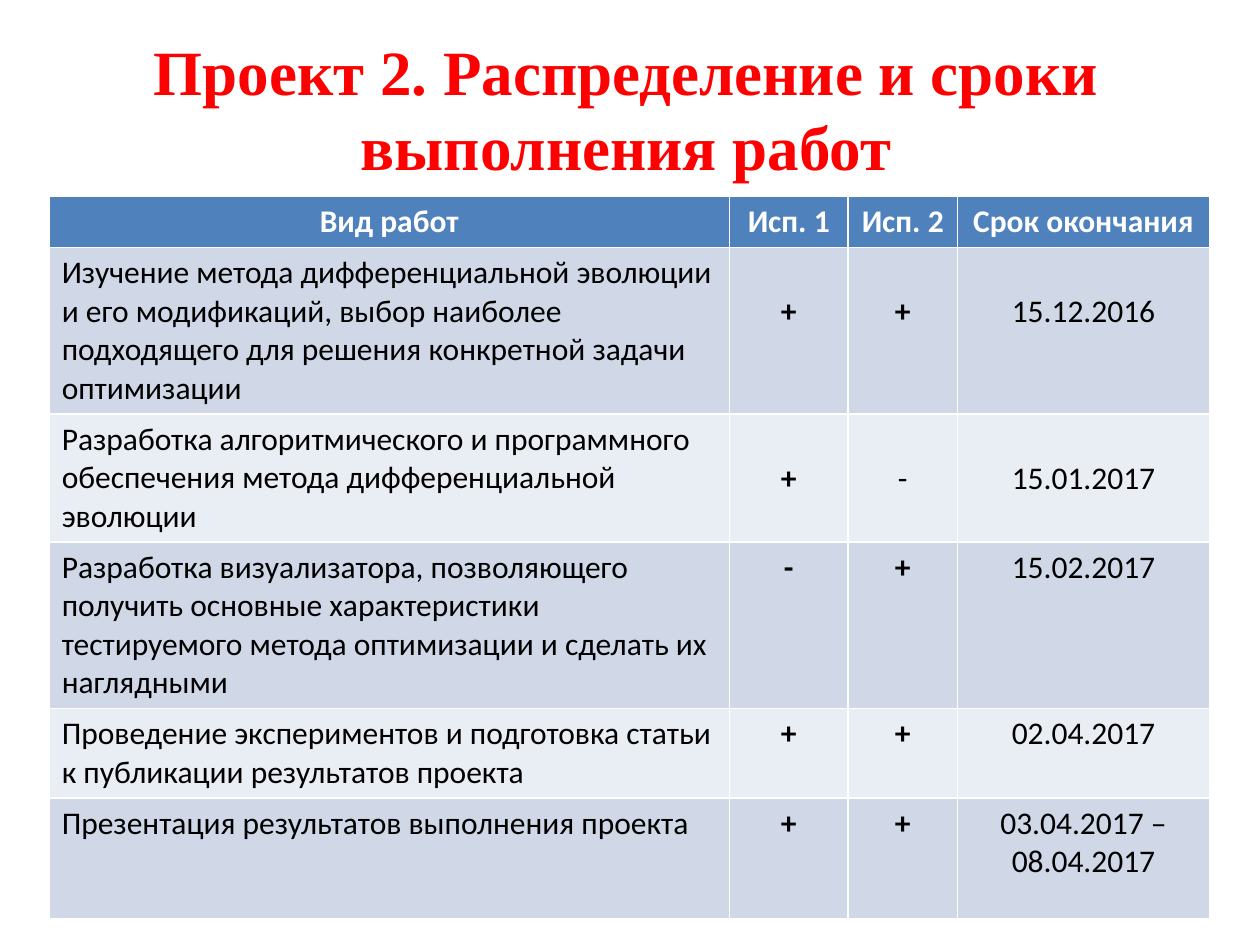
from pptx import Presentation
from pptx.dml.color import RGBColor
from pptx.enum.text import MSO_ANCHOR, PP_ALIGN
from pptx.util import Inches, Pt

CENTER, LEFT = PP_ALIGN.CENTER, PP_ALIGN.LEFT
MIDDLE = MSO_ANCHOR.MIDDLE

TITLE = "Проект 2. Распределение и сроки выполнения работ"
HEADER = ("Вид работ", "Исп. 1", "Исп. 2", "Срок окончания")
TASKS = [
    ("Изучение метода дифференциальной эволюции и его модификаций, "
     "выбор наиболее подходящего для решения конкретной задачи оптимизации",
     "+", "+", "15.12.2016"),
    ("Разработка алгоритмического и программного обеспечения метода "
     "дифференциальной эволюции", "+", "-", "15.01.2017"),
    ("Разработка визуализатора, позволяющего получить основные "
     "характеристики тестируемого метода оптимизации и сделать их наглядными",
     "-", "+", "15.02.2017"),
    ("Проведение экспериментов и подготовка статьи к публикации "
     "результатов проекта", "+", "+", "02.04.2017"),
    ("Презентация результатов выполнения проекта",
     "+", "+", "03.04.2017 – 08.04.2017"),
]
COL_WIDTHS = (5.4, 0.94, 0.87, 2)
ROW_HEIGHTS = (0.39, 1.25, 0.96, 1.25, 0.67, 0.96)
HEADER_FILL = "4F81BD"
BANDS = ("E9EDF4", "D0D8E8")
LOWERED_ROWS = (1, 2)
LOWERED_MARGIN = 0.36
PLAIN_MARK = (2, 2)


def rgb(value):
    return RGBColor.from_string(value)


def style(p, font, size, color, bold, align):
    p.alignment = align
    p.font.name = font
    p.font.size = Pt(size)
    p.font.color.rgb = rgb(color)
    p.font.bold = bold


def add_title(s):
    title = s.shapes.title
    title.left, title.top = Inches(0.47), Inches(0.23)
    title.width, title.height = Inches(9), Inches(1.25)
    tf = title.text_frame
    tf.text = TITLE
    tf.vertical_anchor = MIDDLE
    style(tf.paragraphs[0], "Times New Roman", 36, "FF0000", True, CENTER)


def add_schedule(s):
    rows = [HEADER] + TASKS
    table = s.shapes.add_table(
        len(rows), len(HEADER), Inches(0.39), Inches(1.56),
        Inches(sum(COL_WIDTHS)), Inches(sum(ROW_HEIGHTS))).table
    for column, width in zip(table.columns, COL_WIDTHS):
        column.width = Inches(width)
    for row, height in zip(table.rows, ROW_HEIGHTS):
        row.height = Inches(height)
    for i, values in enumerate(rows):
        for j, value in enumerate(values):
            cell = table.cell(i, j)
            cell.text = value
            cell.fill.solid()
            cell.fill.fore_color.rgb = rgb(BANDS[i % 2] if i else HEADER_FILL)
            if i in LOWERED_ROWS and j:
                cell.margin_top = Inches(LOWERED_MARGIN)
            bold = i == 0 or (j in (1, 2) and (i, j) != PLAIN_MARK)
            style(cell.text_frame.paragraphs[0], "Calibri", 18,
                  "000000" if i else "FFFFFF", bold,
                  LEFT if i and j == 0 else CENTER)


def main():
    prs = Presentation()
    prs.slide_width, prs.slide_height = Inches(10), Inches(7.5)
    s = prs.slides.add_slide(prs.slide_layouts[5])
    add_title(s)
    add_schedule(s)
    prs.save("out.pptx")


if __name__ == "__main__":
    main()
